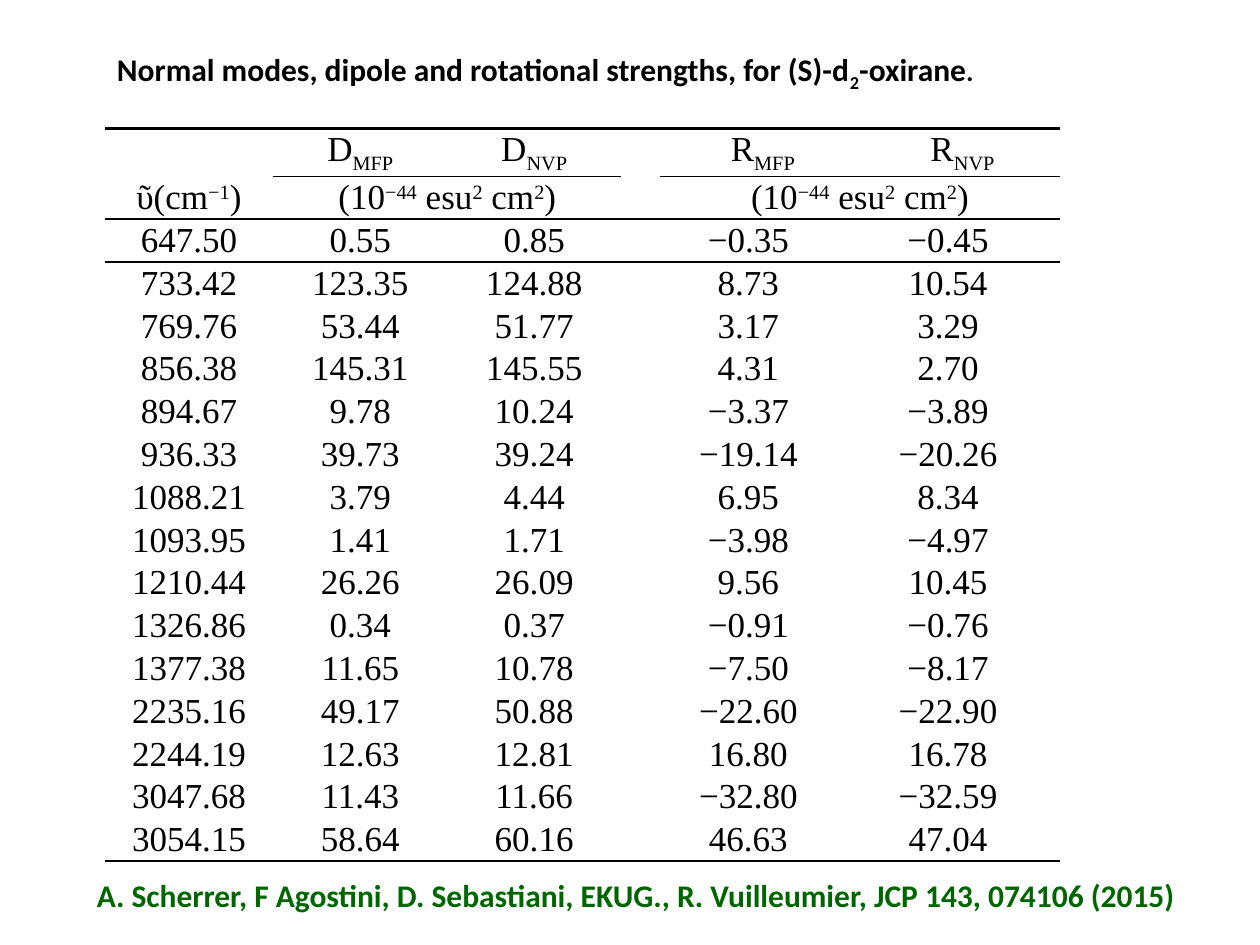
from lxml import etree
from pptx import Presentation
from pptx.dml.color import RGBColor
from pptx.enum.text import MSO_ANCHOR, PP_ALIGN
from pptx.oxml.ns import qn
from pptx.util import Inches, Pt

CENTER = PP_ALIGN.CENTER
MIDDLE = MSO_ANCHOR.MIDDLE
BLACK = RGBColor(0x00, 0x00, 0x00)
GREEN = RGBColor(0x00, 0x66, 0x00)
NO_GRID_STYLE = "{2D5ABB26-0587-4C30-8999-92F81FD0307C}"
BASELINES = {"_": "-25000", "^": "30000"}


def write(paragraph, markup, font, size, color, bold=False):
    """Fill a paragraph; parts split by | are lowered by _ or raised by ^."""
    paragraph.font.name = font
    paragraph.font.size = Pt(size)
    paragraph.font.color.rgb = color
    paragraph.font.bold = bold
    for part in filter(None, markup.split("|")):
        run = paragraph.add_run()
        run.text = part.lstrip("_^")
        if part[0] in BASELINES:
            run.font._element.set("baseline", BASELINES[part[0]])


def rule(cell, side, width):
    """Draw a black line on one side of a cell."""
    line = etree.SubElement(cell._tc.get_or_add_tcPr(), qn("a:" + side), w=str(Pt(width)))
    fill = etree.SubElement(line, qn("a:solidFill"))
    etree.SubElement(fill, qn("a:srgbClr"), val=str(BLACK))


prs = Presentation()
prs.slide_width, prs.slide_height = Inches(10), Inches(7.5)
slide = prs.slides.add_slide(prs.slide_layouts[6])

# Heading and citation
captions = [
    (0.83, 0.35, 7.32, "Normal modes, dipole and rotational strengths, for (S)-d|_2|-oxirane|.", BLACK),
    (0.67, 6.9, 8.88, "A. Scherrer, F Agostini, D. Sebastiani, EKUG., R. Vuilleumier, "
                      "JCP 143, 074106 (2015)", GREEN),
]
for left, top, width, text, color in captions:
    caption = slide.shapes.add_textbox(Inches(left), Inches(top), Inches(width), Inches(0.4))
    caption.text_frame.word_wrap = True
    write(caption.text_frame.paragraphs[0], text, "Calibri", 18, color, True)
    if color == BLACK:
        caption.text_frame.paragraphs[0].runs[-1].font.size = Pt(16)  # full stop

# Table contents: wavenumber, D MFP, D NVP, R MFP, R NVP
UNIT = "(10|^−44| esu|^2| cm|^2|)"
modes = [
    ("647.50", "0.55", "0.85", "−0.35", "−0.45"),
    ("733.42", "123.35", "124.88", "8.73", "10.54"),
    ("769.76", "53.44", "51.77", "3.17", "3.29"),
    ("856.38", "145.31", "145.55", "4.31", "2.70"),
    ("894.67", "9.78", "10.24", "−3.37", "−3.89"),
    ("936.33", "39.73", "39.24", "−19.14", "−20.26"),
    ("1088.21", "3.79", "4.44", "6.95", "8.34"),
    ("1093.95", "1.41", "1.71", "−3.98", "−4.97"),
    ("1210.44", "26.26", "26.09", "9.56", "10.45"),
    ("1326.86", "0.34", "0.37", "−0.91", "−0.76"),
    ("1377.38", "11.65", "10.78", "−7.50", "−8.17"),
    ("2235.16", "49.17", "50.88", "−22.60", "−22.90"),
    ("2244.19", "12.63", "12.81", "16.80", "16.78"),
    ("3047.68", "11.43", "11.66", "−32.80", "−32.59"),
    ("3054.15", "58.64", "60.16", "46.63", "47.04"),
]
rows = [
    ("", "D|_MFP", "D|_NVP", "", "R|_MFP", "", "R|_NVP"),
    ("ῦ(cm|^−1|)", UNIT, "", "", UNIT, "", ""),
]
rows += [(nu, d_mfp, d_nvp, "", r_mfp, r_nvp, "") for nu, d_mfp, d_nvp, r_mfp, r_nvp in modes]
column_widths = [1.34, 1.38, 1.38, 0.31, 1.4, 0.23, 1.54]
last = len(rows) - 1

# Table grid
frame = slide.shapes.add_table(len(rows), len(column_widths), Inches(0.83), Inches(1.02),
                               Inches(sum(column_widths)), Inches(0.34 * len(rows)))
table = frame.table
table.first_row = table.horz_banding = False
table._tbl.tblPr.find(qn("a:tableStyleId")).text = NO_GRID_STYLE
for column, width in zip(table.columns, column_widths):
    column.width = Inches(width)
for row in table.rows:
    row.height = Inches(0.34)

# Cells and their rules
for r, texts in enumerate(rows):
    for c, text in enumerate(texts):
        cell = table.cell(r, c)
        cell.margin_left = cell.margin_right = Inches(0.07)
        cell.margin_top = cell.margin_bottom = 0
        cell.vertical_anchor = MIDDLE
        paragraph = cell.text_frame.paragraphs[0]
        paragraph.alignment = CENTER
        write(paragraph, text, "Times New Roman", 20, BLACK)
        in_group = c not in (0, 3)
        if r in (0, 2):
            rule(cell, "lnT", 1.5)
        elif r == 1 and in_group:
            rule(cell, "lnT", 1)
        if r in (1, last):
            rule(cell, "lnB", 1.5)
        elif r == 0 and in_group:
            rule(cell, "lnB", 1)
        cell.fill.background()

# Spans: header groups, then the last value of each mode
spans = [(0, 4, 5), (1, 1, 2), (1, 4, 6)] + [(r, 5, 6) for r in range(2, len(rows))]
for r, first, final in spans:
    table.cell(r, first).merge(table.cell(r, final))

prs.save("out.pptx")
